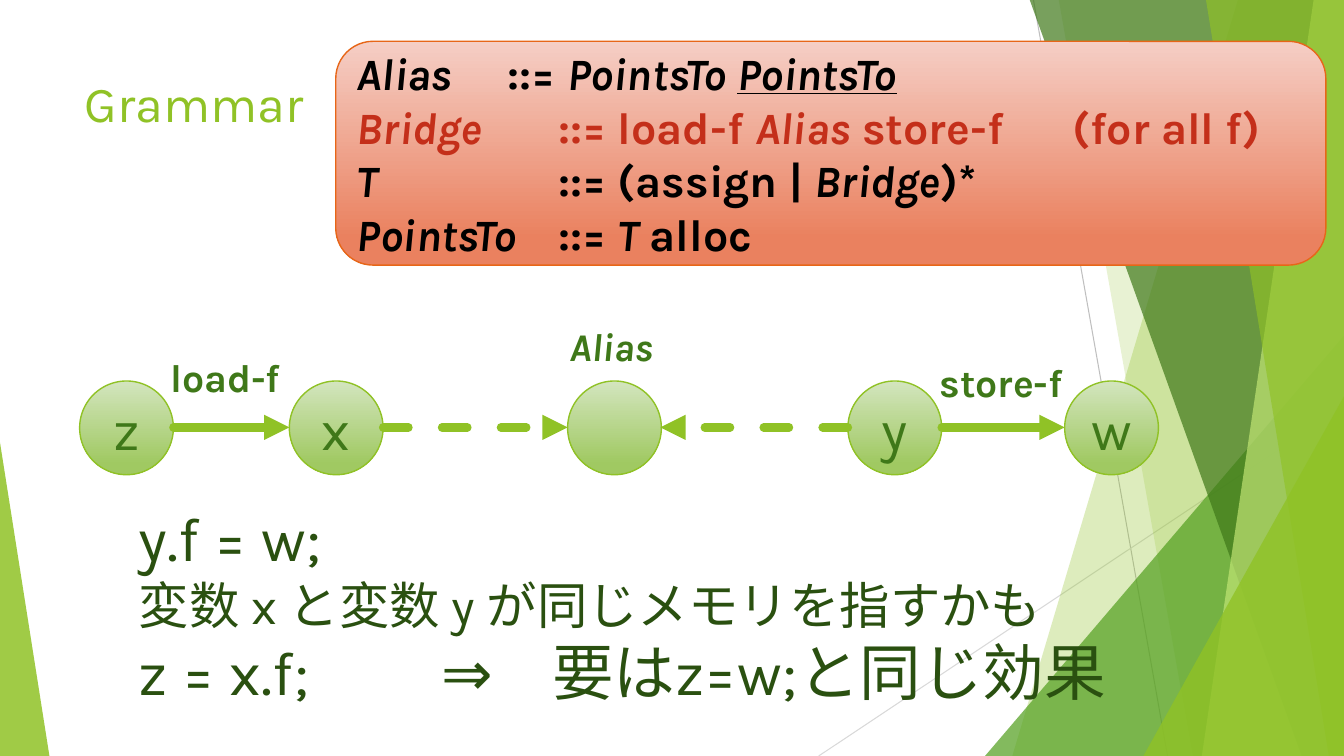
import pptx
import pptx.util
import pptx.dml.color
import pptx.enum.dml
import pptx.enum.shapes
import pptx.enum.text
import pptx.oxml.ns
import lxml.etree

Inches = pptx.util.Inches
MSO_SHAPE = pptx.enum.shapes.MSO_SHAPE
ALIGN = pptx.enum.text.PP_ALIGN
ANCHOR = pptx.enum.text.MSO_ANCHOR

COLORS = {
    "lime": "90C226", "leaf": "54A021", "forest": "3F7819", "pale": "C0E474",
    "deep": "2A5010", "black": "000000", "red": "C42F1A", "orange": "E76618",
    "grey": "BFBFBF", "light_grey": "D9D9D9",
    "node_top": "D3E5BE", "node_bottom": "A0C962",
    "rules_top": "F5CEC5", "rules_bottom": "EA815F",
}
ROMAN = {"bold": True, "italic": False}
ITALIC = {"bold": True, "italic": True}
UNDERLINED = {"bold": True, "italic": True, "underline": True}

RIBBONS = [
    ([(12.28, -0.01), (13.33, -0.01), (13.33, 7.5), (10.04, 7.5)], "lime", 30),
    ([(10.5, -0.01), (13.33, -0.01), (13.33, 7.5), (11.83, 7.5)], "lime", 20),
    ([(13.33, 3.33), (13.33, 7.5), (9.77, 7.5)], "leaf", 72),
    ([(10.21, -0.01), (13.33, -0.01), (13.33, 7.5), (12.91, 7.5)], "forest", 70),
    ([(13.03, -0.01), (13.33, -0.01), (13.33, 7.5), (11.92, 7.5)], "pale", 70),
    ([(11.96, -0.01), (13.33, -0.01), (13.33, 7.5), (13.18, 7.5)], "lime", 65),
    ([(13.33, 3.93), (13.33, 7.5), (11.34, 7.5)], "lime", 80),
    ([(0, 4.39), (0.49, 7.5), (0, 7.5)], "lime", 85),
]
NODE_SIZE, NODE_TOP, EDGE_Y = 0.93, 3.78, 4.24
NODES = [("z", 0.79), ("x", 2.87), ("", 5.63), ("y", 8.41), ("w", 10.56)]
EDGES = [(1.72, 2.87, False), (3.8, 5.63, True), (8.41, 6.55, True), (9.34, 10.56, False)]
EDGE_LABELS = [("load-f", 1.59, 3.46, ROMAN), ("store-f", 9.22, 3.51, ROMAN),
               ("Alias", 5.55, 3.15, ITALIC)]
RULES = [
    ("black", [("Alias", ITALIC), ("\t\t::= ", ROMAN), ("PointsTo ", ITALIC),
               ("PointsTo", UNDERLINED)]),
    ("red", [("Bridge", ITALIC), ("\t\t::= load-f ", ROMAN), ("Alias", ITALIC),
             (" store-f\t(for all f)", ROMAN)]),
    ("black", [("T", ITALIC), ("\t\t\t\t::= (assign | ", ROMAN), ("Bridge", ITALIC),
               (")*", ROMAN), None, ("PointsTo", ITALIC), ("\t::= ", ROMAN),
               ("T ", ITALIC), ("alloc", ROMAN)]),
]
PROGRAM = [("y.f = w;", 44), ("変数 x と変数 y が同じメモリを指すかも", 36),
           ("z = x.f;\t⇒\t要はz=w;と同じ効果", 44)]


def rgb(color):
    """Return the named colour."""
    return pptx.dml.color.RGBColor.from_string(COLORS[color])


def add_xml(parent, tag, **attributes):
    """Append a DrawingML element and return it."""
    return lxml.etree.SubElement(parent, pptx.oxml.ns.qn(tag), attributes)


def add_run(paragraph, text, size, color, styles=None):
    """Add one formatted run."""
    run = paragraph.add_run()
    run.text = text
    formats = {"name": "Karla", "size": pptx.util.Pt(size), **(styles or {})}
    for name, value in formats.items():
        setattr(run.font, name, value)
    run.font.color.rgb = rgb(color)


def set_tabs(paragraph, stops):
    """Place left tab stops at the given inches."""
    tabs = add_xml(paragraph._p.get_or_add_pPr(), "a:tabLst")
    for stop in stops:
        add_xml(tabs, "a:tab", pos=str(Inches(stop)), algn="l")


def add_ribbon(slide, points, color, opacity):
    """Draw one translucent background polygon."""
    corners = [(Inches(x), Inches(y)) for x, y in points]
    builder = slide.shapes.build_freeform(*corners[0], scale=1.0)
    builder.add_line_segments(corners[1:], close=True)
    ribbon = builder.convert_to_shape()
    ribbon.shadow.inherit = False
    ribbon.fill.solid()
    ribbon.fill.fore_color.rgb = rgb(color)
    ribbon.line.fill.background()
    tint = ribbon.fill._xPr.find(".//" + pptx.oxml.ns.qn("a:srgbClr"))
    add_xml(tint, "a:alpha", val=str(opacity * 1000))


def add_line(slide, start, end, color, width):
    """Draw a straight connector without a shadow."""
    line = slide.shapes.add_connector(
        pptx.enum.shapes.MSO_CONNECTOR.STRAIGHT, *map(Inches, start + end))
    line.line.color.rgb = rgb(color)
    line.line.width = pptx.util.Pt(width)
    add_xml(line._element.spPr, "a:effectLst")
    return line


def add_edge(slide, start, end, dashed):
    """Draw a thick arrow between two nodes."""
    edge = add_line(slide, (start, EDGE_Y), (end, EDGE_Y), "lime", 6)
    if dashed:
        edge.line.dash_style = pptx.enum.dml.MSO_LINE.DASH
    outline = edge.line._get_or_add_ln()
    outline.set("cap", "rnd")
    add_xml(outline, "a:tailEnd", type="triangle")


def add_gradient_shape(slide, kind, box, name, outline):
    """Draw a shape with a downward gradient and middle-anchored text."""
    shape = slide.shapes.add_shape(kind, *map(Inches, box))
    shape.shadow.inherit = False
    shape.fill.gradient()
    shape.fill.gradient_angle = 270
    ends = (("top", 0), ("bottom", 0.88))
    for stop, (end, position) in zip(shape.fill.gradient_stops, ends):
        stop.color.rgb = rgb(f"{name}_{end}")
        stop.position = position
    shape.line.color.rgb = rgb(outline)
    shape.line.width = pptx.util.Pt(1)
    shape.text_frame.vertical_anchor = ANCHOR.MIDDLE
    return shape


def add_node(slide, label, left):
    """Draw one variable circle."""
    node = add_gradient_shape(slide, MSO_SHAPE.OVAL,
                              (left, NODE_TOP, NODE_SIZE, NODE_SIZE), "node", "lime")
    if label:
        variable = node.text_frame.paragraphs[0]
        variable.alignment = ALIGN.CENTER
        add_run(variable, label, 40, "forest")


def add_text(slide, box, lines, color, styles=None, stops=()):
    """Add a wrapping text box with one paragraph per (text, size) line."""
    frame = slide.shapes.add_textbox(*map(Inches, box)).text_frame
    frame.word_wrap = True
    for index, (text, size) in enumerate(lines):
        paragraph = frame.add_paragraph() if index else frame.paragraphs[0]
        add_run(paragraph, text, size, color, styles)
        if "\t" in text:
            set_tabs(paragraph, stops)


def add_rules(slide):
    """Draw the grammar panel."""
    panel = add_gradient_shape(slide, MSO_SHAPE.ROUNDED_RECTANGLE,
                               (3.33, 0.41, 9.82, 2.22), "rules", "orange")
    frame = panel.text_frame
    for index, (color, parts) in enumerate(RULES):
        rule = frame.add_paragraph() if index else frame.paragraphs[0]
        rule.alignment = ALIGN.LEFT
        set_tabs(rule, (0.5, 1, 1.5, 2, 7.1))
        for part in parts:
            if part is None:
                rule.add_line_break()
            else:
                add_run(rule, part[0], 32, color, part[1])


def set_title(slide, text):
    """Fill and place the title placeholder."""
    title = slide.shapes.title
    place = {"left": 0.74, "top": 0.67, "width": 9.4, "height": 1.44}
    for name, value in place.items():
        setattr(title, name, Inches(value))
    title.text_frame.vertical_anchor = ANCHOR.TOP
    heading = title.text_frame.paragraphs[0]
    heading.alignment = ALIGN.LEFT
    add_run(heading, text, 36, "lime")


def main():
    """Build the grammar slide."""
    deck = pptx.Presentation()
    deck.slide_width, deck.slide_height = Inches(13.33), Inches(7.5)
    slide = deck.slides.add_slide(deck.slide_layouts[5])
    add_line(slide, (10.25, 0), (11.58, 7.5), "grey", 0.75)
    add_line(slide, (13.33, 4.03), (8.12, 7.5), "light_grey", 0.75)
    for ribbon in RIBBONS:
        add_ribbon(slide, *ribbon)
    set_title(slide, "Grammar")
    for node in NODES:
        add_node(slide, *node)
    for edge in EDGES:
        add_edge(slide, *edge)
    for text, left, top, styles in EDGE_LABELS:
        add_text(slide, (left, top, 1.63, 0.57), [(text, 28)], "forest", styles)
    add_text(slide, (1.28, 4.91, 11.34, 2.19), PROGRAM, "deep", stops=(3, 4.1))
    add_rules(slide)
    deck.save("out.pptx")


if __name__ == "__main__":
    main()
